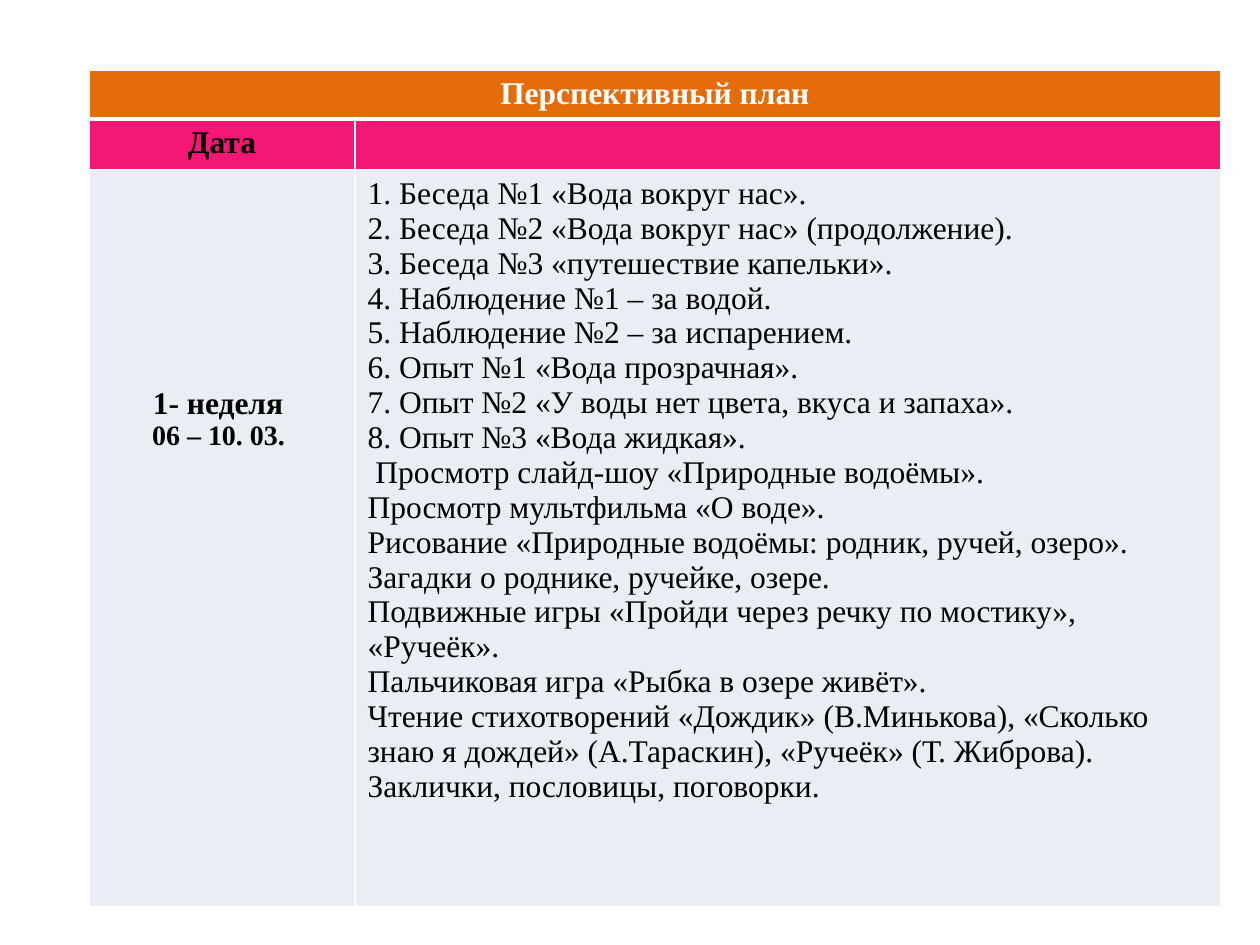
from lxml.etree import SubElement
from pptx import Presentation
from pptx.dml.color import RGBColor
from pptx.enum.text import PP_ALIGN
from pptx.oxml.ns import qn
from pptx.util import Pt

EMU_PER_PX = 914400 / 126
FONT = "Times New Roman"
WHITE = RGBColor(0xFF, 0xFF, 0xFF)
BLACK = RGBColor(0x00, 0x00, 0x00)
ORANGE = RGBColor(0xE4, 0x6C, 0x0A)
PINK = RGBColor(0xF5, 0x17, 0x76)
PALE_BLUE = RGBColor(0xE9, 0xED, 0xF4)

COLUMN_WIDTHS = [266, 866]
ROW_HEIGHTS = [49, 50, 737]
ROW_FILLS = [ORANGE, PINK, PALE_BLUE]

ACTIVITIES = [
    "1. Беседа №1 «Вода вокруг нас».",
    "2. Беседа №2 «Вода вокруг нас» (продолжение).",
    "3. Беседа №3 «путешествие капельки».",
    "4. Наблюдение №1 – за водой.",
    "5. Наблюдение №2 – за испарением.",
    "6. Опыт №1 «Вода прозрачная».",
    "7. Опыт №2 «У воды нет цвета, вкуса и запаха».",
    "8. Опыт №3 «Вода жидкая».",
    " Просмотр слайд-шоу «Природные водоёмы».",
    "Просмотр мультфильма «О воде».",
    "Рисование «Природные водоёмы: родник, ручей, озеро».",
    "Загадки о роднике, ручейке, озере.",
    "Подвижные игры «Пройди через речку по мостику», «Ручеёк».",
    "Пальчиковая игра «Рыбка в озере живёт».",
    "Чтение стихотворений «Дождик» (В.Минькова), «Сколько знаю я дождей» "
    "(А.Тараскин), «Ручеёк» (Т. Жиброва).",
    "Заклички, пословицы, поговорки.",
]


def px(length):
    return round(length * EMU_PER_PX)


def set_borders(cell, top, bottom):
    """Give the cell white borders; widths are in points."""
    properties = cell._tc.get_or_add_tcPr()
    for side, width in (("L", 1), ("R", 1), ("T", top), ("B", bottom)):
        line = SubElement(properties, qn(f"a:ln{side}"), w=str(Pt(width)))
        fill = SubElement(line, qn("a:solidFill"))
        SubElement(fill, qn("a:srgbClr"), val=str(WHITE))


def add_table(slide, left, top):
    shape = slide.shapes.add_table(
        len(ROW_HEIGHTS), len(COLUMN_WIDTHS), px(left), px(top),
        px(sum(COLUMN_WIDTHS)), px(sum(ROW_HEIGHTS)))
    table = shape.table
    for column, width in zip(table.columns, COLUMN_WIDTHS):
        column.width = px(width)
    for index, (row, height) in enumerate(zip(table.rows, ROW_HEIGHTS)):
        row.height = px(height)
        for cell in row.cells:
            # A thicker rule separates the heading from the rest
            set_borders(cell, top=3 if index == 1 else 1,
                        bottom=3 if index == 0 else 1)
            cell.fill.solid()
            cell.fill.fore_color.rgb = ROW_FILLS[index]
    table.cell(0, 0).merge(table.cell(0, len(COLUMN_WIDTHS) - 1))
    return table


def write_lines(cell, lines, sizes=None, color=BLACK, bold=True,
                alignment=PP_ALIGN.CENTER, hanging=0):
    """Write one paragraph per line, 18 pt unless sizes are given."""
    frame = cell.text_frame
    for index, line in enumerate(lines):
        paragraph = frame.add_paragraph() if index else frame.paragraphs[0]
        paragraph.alignment = alignment
        if hanging:
            properties = paragraph._p.get_or_add_pPr()
            properties.set("marL", str(px(hanging)))
            properties.set("indent", str(-px(hanging)))
        run = paragraph.add_run()
        run.text = line
        run.font.name = FONT
        run.font.size = Pt(sizes[index] if sizes else 18)
        run.font.bold = bold
        run.font.color.rgb = color


def main():
    presentation = Presentation()
    presentation.slide_width = px(1260)
    presentation.slide_height = px(945)
    slide = presentation.slides.add_slide(presentation.slide_layouts[6])

    table = add_table(slide, 89, 70)

    # Headings
    write_lines(table.cell(0, 0), ["Перспективный план"], color=WHITE)
    write_lines(table.cell(1, 0), ["Дата"])

    # Week, lowered beside the middle of the activities
    week = table.cell(2, 0)
    week.margin_top = px(216)
    write_lines(week, ["1- неделя ", "06 – 10. 03. "], sizes=[18, 16], hanging=55)

    # Activities
    write_lines(table.cell(2, 1), ACTIVITIES, bold=False, alignment=PP_ALIGN.LEFT)

    presentation.save("out.pptx")


if __name__ == "__main__":
    main()
